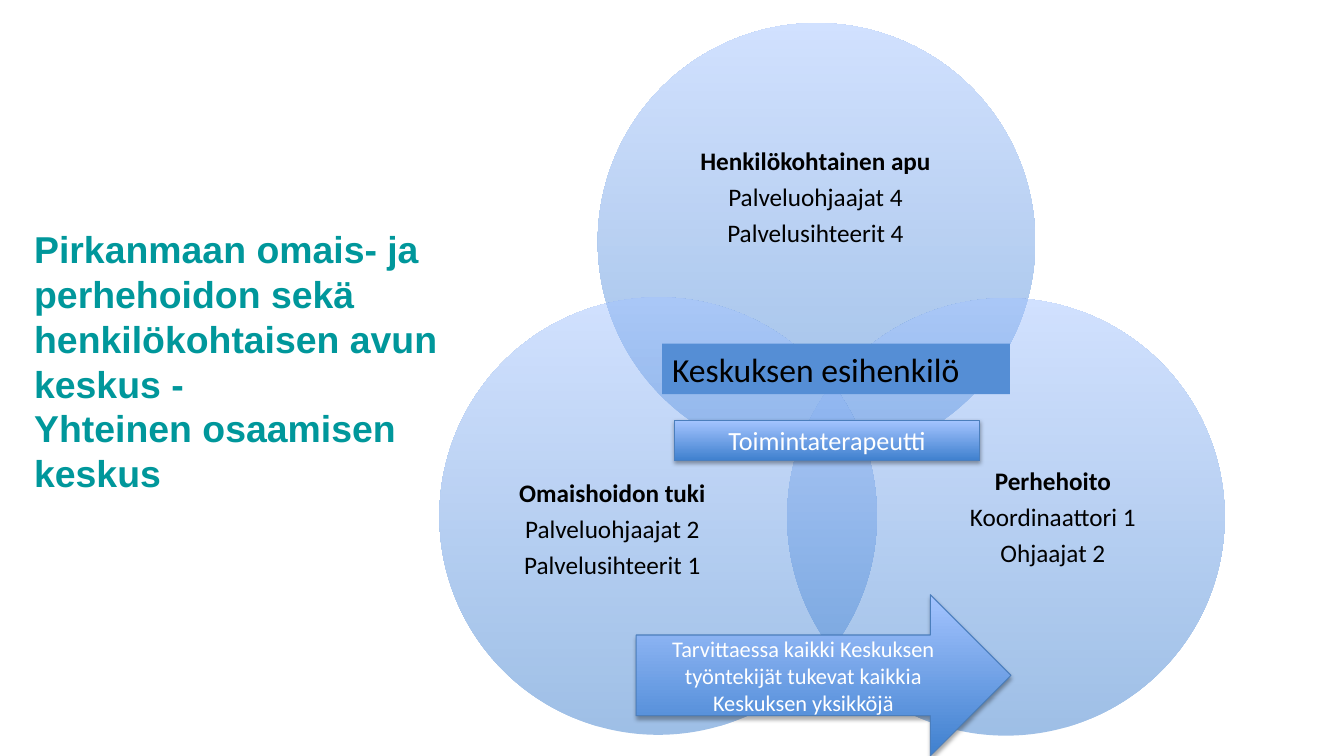
from lxml import etree
from pptx import Presentation
from pptx import util as u
from pptx.dml import color
from pptx.enum import shapes, text
from pptx.oxml import ns

DARK, LIGHT = "3F80CE", "A4C4FF"


def rgb(value):
    """Turn a hex string into a colour."""
    return color.RGBColor.from_string(value)


def add_element(parent, tag, **attributes):
    """Append a drawing element to a parent element."""
    return etree.SubElement(parent, ns.qn(tag), attributes)


def fill_gradient(shape, alpha=None):
    """Shade a shape from dark at the bottom to light at the top."""
    shape.fill.gradient()
    shape.fill.gradient_angle = 90
    for stop, position, value in zip(shape.fill.gradient_stops, (0, 1), (DARK, LIGHT)):
        stop.position = position
        stop.color.rgb = rgb(value)
    if alpha:
        for value in shape.fill._xPr.iter(ns.qn("a:srgbClr")):
            add_element(value, "a:alpha", val=str(alpha * 1000))


def add_shadow(shape):
    """Give a shape a soft shadow below it."""
    effects = shape._element.spPr.find(ns.qn("a:effectLst"))
    shadow = add_element(effects, "a:outerShdw", blurRad="40000", dist="23000",
                         dir="5400000", rotWithShape="0")
    value = add_element(shadow, "a:srgbClr", val="000000")
    add_element(value, "a:alpha", val="35000")


def add_preset(slide, kind, box):
    """Add a preset shape without line or shadow."""
    shape = slide.shapes.add_shape(kind, *map(u.Pt, box))
    shape.shadow.inherit = False
    shape.line.fill.background()
    return shape


def write(shape, lines, size, value, align, anchor=text.MSO_ANCHOR.MIDDLE, font="Calibri"):
    """Write one paragraph per line and return the paragraphs."""
    frame = shape.text_frame
    frame.word_wrap = True
    frame.vertical_anchor = anchor
    frame.text = "\n".join(lines)
    for paragraph in frame.paragraphs:
        paragraph.alignment = align
        paragraph.font.name = font
        paragraph.font.size = u.Pt(size)
        paragraph.font.color.rgb = rgb(value)
    return frame.paragraphs


def add_title(slide, box):
    """Add the heading beside the circles."""
    shape = slide.shapes.add_textbox(*map(u.Pt, box))
    heading = ("Pirkanmaan omais- ja perhehoidon sekä henkilökohtaisen avun keskus -"
               "\vYhteinen osaamisen keskus")
    paragraph, = write(shape, [heading], 26.7, "00979B", text.PP_ALIGN.LEFT, font="Arial")
    paragraph.font.bold = True
    paragraph.line_spacing = u.Pt(32)


def add_unit(slide, box, label_box, lines):
    """Add a translucent circle and its label, placed relative to the circle."""
    left, top, _, _ = box
    fill_gradient(add_preset(slide, shapes.MSO_SHAPE.OVAL, box), alpha=50)
    dx, dy, width, height = label_box
    label = slide.shapes.add_textbox(*map(u.Pt, (left + dx, top + dy, width, height)))
    frame = label.text_frame
    frame.margin_left = frame.margin_right = frame.margin_top = frame.margin_bottom = 0
    paragraphs = write(label, lines, 18, "000000", text.PP_ALIGN.CENTER)
    for index, paragraph in enumerate(paragraphs):
        paragraph.font.bold = index == 0
        paragraph.line_spacing = 0.9
        paragraph.space_after = u.Pt(6.3)


def add_manager(slide, box):
    """Add the flat bar naming the manager."""
    shape = add_preset(slide, shapes.MSO_SHAPE.RECTANGLE, box)
    shape.fill.solid()
    shape.fill.fore_color.rgb = rgb("558ED5")
    write(shape, ["Keskuksen esihenkilö"], 24, "000000", text.PP_ALIGN.LEFT,
          text.MSO_ANCHOR.TOP)


def add_raised(slide, kind, box, caption, size):
    """Add a shaded, outlined shape with a shadow and white text."""
    shape = add_preset(slide, kind, box)
    fill_gradient(shape)
    shape.line.color.rgb = rgb("4B7EBC")
    shape.line.width = u.Pt(0.75)
    add_shadow(shape)
    write(shape, [caption], size, "FFFFFF", text.PP_ALIGN.CENTER)


def main():
    """Build the slide and save it."""
    presentation = Presentation()
    presentation.slide_width, presentation.slide_height = u.Pt(960), u.Pt(540)
    slide = presentation.slides.add_slide(presentation.slide_layouts[6])
    add_title(slide, (17.3, 137.5, 310.3, 240.5))
    diameter = 312.5
    units = [
        (427, 16.5, (41, 54.8, 229, 140.4),
         ["Henkilökohtainen apu", "Palveluohjaajat 4", "Palvelusihteerit 4"]),
        (562.3, 213, (95.8, 71.5, 188, 172),
         ["Perhehoito", "Koordinaattori 1", "Ohjaajat 2"]),
        (313.9, 212.4, (29.5, 80.6, 188, 172),
         ["Omaishoidon tuki", "Palveluohjaajat 2", "Palvelusihteerit 1"]),
    ]
    for left, top, label_box, lines in units:
        add_unit(slide, (left, top, diameter, diameter), label_box, lines)
    add_manager(slide, (473, 245.5, 248.4, 36))
    add_raised(slide, shapes.MSO_SHAPE.RECTANGLE, (481.7, 300.2, 218.2, 28.8),
               "Toimintaterapeutti", 18.7)
    add_raised(slide, shapes.MSO_SHAPE.RIGHT_ARROW, (454.3, 424.8, 267.8, 115.2),
               "Tarvittaessa kaikki Keskuksen työntekijät tukevat kaikkia Keskuksen yksikköjä", 16)
    presentation.save("out.pptx")


if __name__ == "__main__":
    main()
